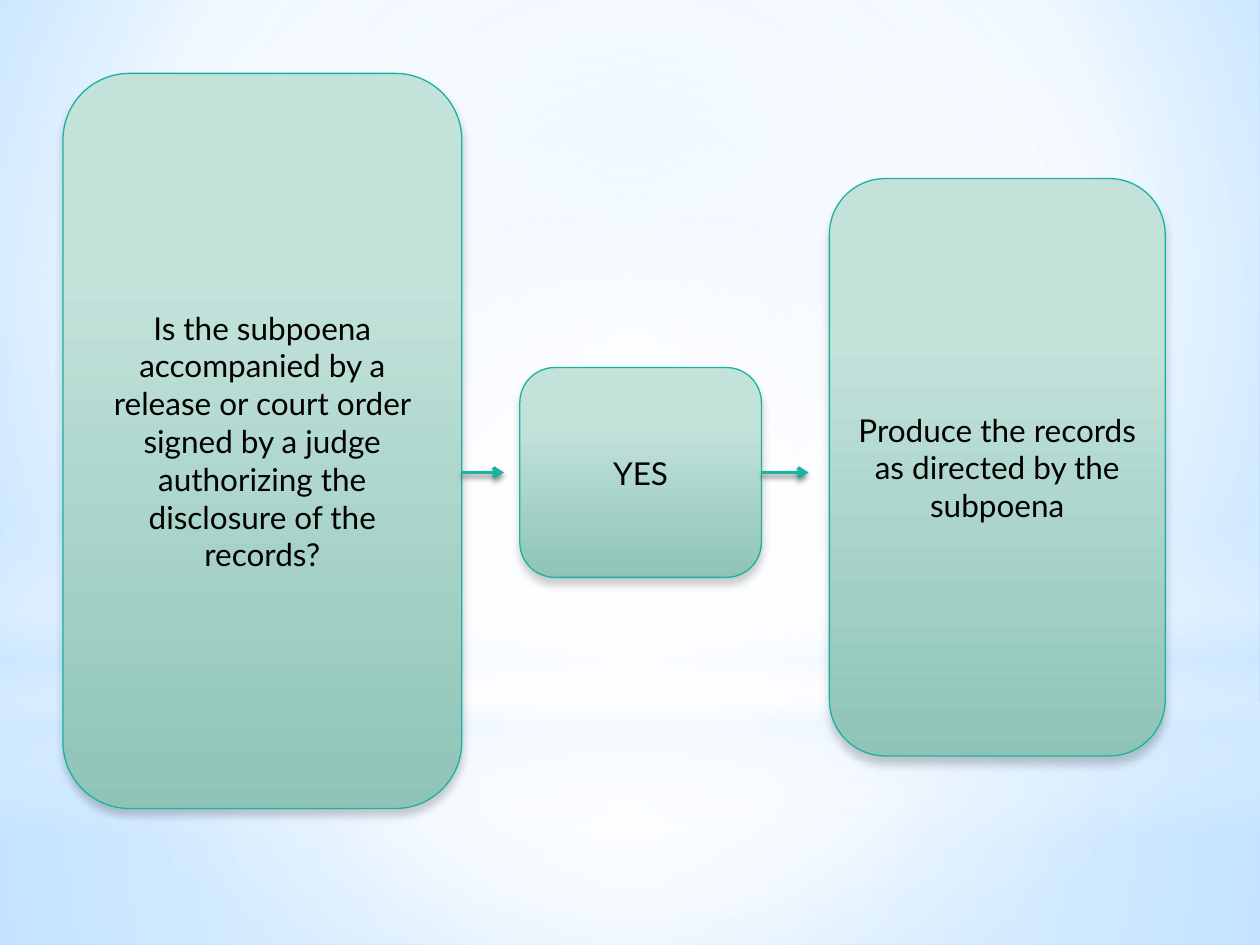
import pptx
import pptx.dml.color
import pptx.enum.shapes
import pptx.enum.text
import pptx.oxml
import pptx.oxml.ns
import pptx.util
from pptx.dml.color import RGBColor
from pptx.util import Cm

SHAPES = pptx.enum.shapes.MSO_SHAPE
WHITE = RGBColor(0xFF, 0xFF, 0xFF)
BLACK = RGBColor(0x00, 0x00, 0x00)
PALE_BLUE = RGBColor(0xD6, 0xEC, 0xFF)
LIGHT_BLUE = RGBColor(0xC2, 0xE3, 0xFF)
SKY_BLUE = RGBColor(0x79, 0xC1, 0xFF)
LIGHT_GREEN = RGBColor(0xC2, 0xE2, 0xDA)
GREEN = RGBColor(0x8E, 0xC4, 0xB7)
TEAL = RGBColor(0x1A, 0xB3, 0x9F)

SLIDE_WIDTH, SLIDE_HEIGHT = Cm(25.4), Cm(19.05)
HORIZON = Cm(14.17)
CENTRE = (50, 50, 50, 50)


def paint_gradient(owner, fill, stops, focus=None):
    """Fill with (position, colour, opacity) stops: circular around focus, else downwards."""
    fill.gradient()
    stop_xml = "".join(
        f'<a:gs pos="{position * 1000}"><a:srgbClr val="{colour}">'
        f'<a:alpha val="{opacity * 1000}"/></a:srgbClr></a:gs>'
        for position, colour, opacity in stops)
    if focus:
        sides = " ".join(f'{side}="{value * 1000}"' for side, value in zip("ltrb", focus))
        direction = f'<a:path path="circle"><a:fillToRect {sides}/></a:path>'
    else:
        direction = '<a:lin ang="5400000" scaled="0"/>'
    gradient = pptx.oxml.parse_xml(
        f'<a:gradFill {pptx.oxml.ns.nsdecls("a")} rotWithShape="1">'
        f'<a:gsLst>{stop_xml}</a:gsLst>{direction}</a:gradFill>')
    default = owner.element.find(".//" + pptx.oxml.ns.qn("a:gradFill"))
    default.getparent().replace(default, gradient)


def drop_shadow(part, opacity, blur, distance):
    part.element.spPr.append(pptx.oxml.parse_xml(
        f'<a:effectLst {pptx.oxml.ns.nsdecls("a")}>'
        f'<a:outerShdw blurRad="{pptx.util.Pt(blur)}" dist="{pptx.util.Pt(distance)}" '
        f'dir="5400000" algn="ctr" rotWithShape="0"><a:srgbClr val="{BLACK}">'
        f'<a:alpha val="{opacity * 1000}"/></a:srgbClr></a:outerShdw></a:effectLst>'))


def add_glow(slide, kind, top, height, stops, focus=None):
    glow = slide.shapes.add_shape(kind, 0, top, SLIDE_WIDTH, height)
    glow.shadow.inherit = False
    glow.line.fill.background()
    paint_gradient(glow, glow.fill, stops, focus)


def add_backdrop(slide):
    paint_gradient(slide, slide.background.fill,
                   [(0, LIGHT_BLUE, 100), (60, WHITE, 100), (100, SKY_BLUE, 100)],
                   (20, 10, 20, 60))
    add_glow(slide, SHAPES.RECTANGLE, HORIZON, SLIDE_HEIGHT - HORIZON,
             [(0, WHITE, 91), (37, WHITE, 76), (100, PALE_BLUE, 79)], CENTRE)
    add_glow(slide, SHAPES.RECTANGLE, 0, HORIZON,
             [(0, WHITE, 89), (48, WHITE, 62), (100, PALE_BLUE, 79)], CENTRE)
    add_glow(slide, SHAPES.RECTANGLE, Cm(10.48), Cm(6.35),
             [(0, WHITE, 0), (29, WHITE, 30), (45, PALE_BLUE, 40),
              (55, WHITE, 26), (65, PALE_BLUE, 60), (100, WHITE, 0)])
    add_glow(slide, SHAPES.OVAL, Cm(4.45), HORIZON,
             [(0, WHITE, 100), (56, WHITE, 0)], CENTRE)


def add_step(slide, text, left, top, width, height):
    step = slide.shapes.add_shape(SHAPES.FLOWCHART_ALTERNATE_PROCESS,
                                  left, top, width, height)
    paint_gradient(step, step.fill, [(28, LIGHT_GREEN, 100), (100, GREEN, 100)])
    step.line.color.rgb = TEAL
    step.line.width = pptx.util.Pt(0.75)
    drop_shadow(step, 20, 5, 4)
    frame = step.text_frame
    frame.text = text
    frame.word_wrap = True
    frame.vertical_anchor = pptx.enum.text.MSO_ANCHOR.MIDDLE
    paragraph = frame.paragraphs[0]
    paragraph.alignment = pptx.enum.text.PP_ALIGN.CENTER
    font = paragraph.runs[0].font
    font.name = "Lato"
    font.size = pptx.util.Pt(18)
    font.color.rgb = BLACK
    return step


def add_arrow(slide, start, end, height):
    arrow = slide.shapes.add_connector(pptx.enum.shapes.MSO_CONNECTOR.STRAIGHT,
                                       start, height, end, height)
    arrow.line.color.rgb = TEAL
    arrow.line.width = pptx.util.Pt(2)
    arrow.line._get_or_add_ln().append(pptx.oxml.parse_xml(
        f'<a:tailEnd {pptx.oxml.ns.nsdecls("a")} type="arrow"/>'))
    drop_shadow(arrow, 45, 3.1, 1.8)


def add_flow(slide):
    question = add_step(
        slide,
        "Is the subpoena accompanied by a release or court order signed by a judge "
        "authorizing the disclosure of the records?",
        Cm(1.27), Cm(1.48), Cm(8.04), Cm(14.82))
    answer = add_step(slide, "YES", Cm(10.48), Cm(7.41), Cm(4.87), Cm(4.23))
    add_step(slide, "Produce the records as directed by the subpoena",
             Cm(16.72), Cm(3.6), Cm(6.77), Cm(11.64))
    middle = answer.top + answer.height // 2
    for source, end in ((question, Cm(10.16)), (answer, Cm(16.3))):
        add_arrow(slide, source.left + source.width, end, middle)


def main():
    deck = pptx.Presentation()
    deck.slide_width, deck.slide_height = SLIDE_WIDTH, SLIDE_HEIGHT
    slide = deck.slides.add_slide(deck.slide_layouts[6])
    add_backdrop(slide)
    add_flow(slide)
    deck.save("out.pptx")


if __name__ == "__main__":
    main()
